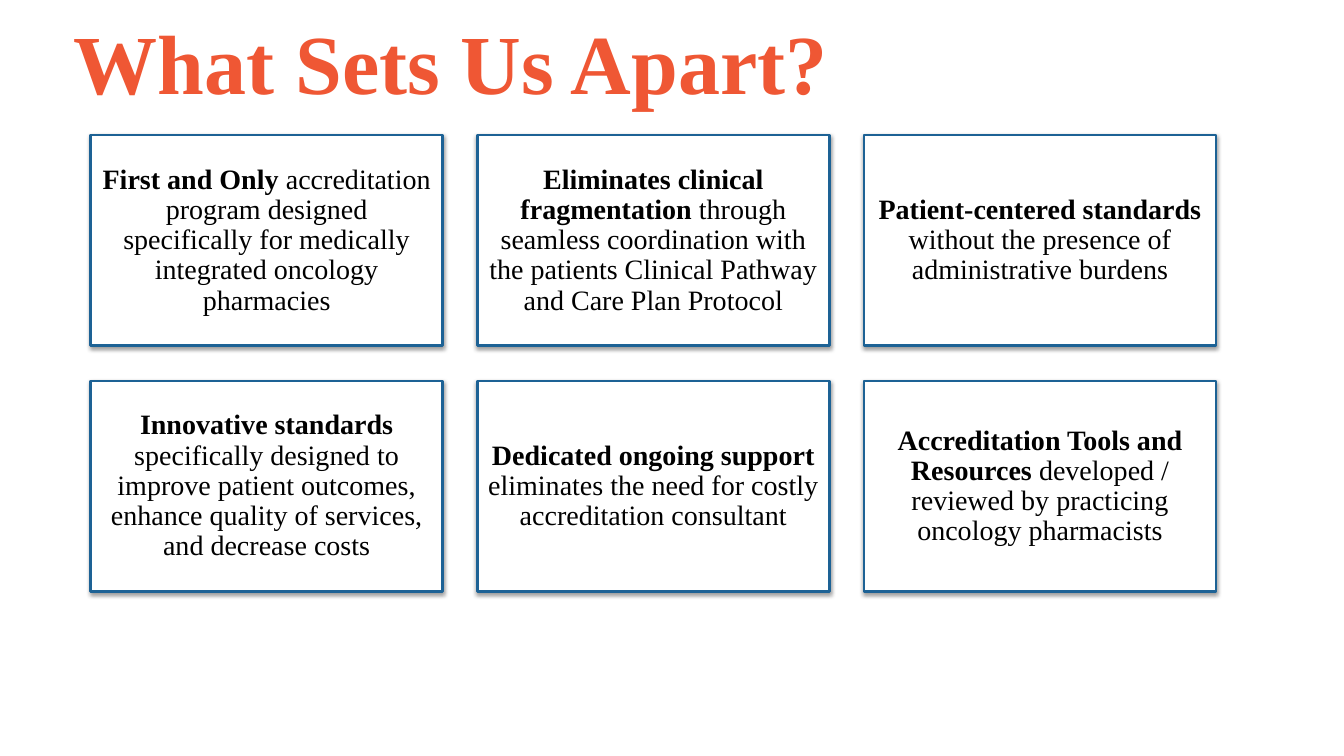
from lxml import etree
from pptx import Presentation
from pptx import util as u
from pptx.dml.color import RGBColor
from pptx.enum import shapes, text
from pptx.oxml import ns

ORANGE = RGBColor(0xEF, 0x57, 0x34)
BLUE = RGBColor(0x1D, 0x62, 0x95)
WHITE = RGBColor(0xFF, 0xFF, 0xFF)
BLACK = RGBColor(0x00, 0x00, 0x00)
FONT = "Times New Roman"

COLUMNS = 3
GRID_LEFT, GRID_TOP = 0.9, 1.34
CARD_WIDTH, CARD_HEIGHT = 3.49, 2.09
COLUMN_STEP, ROW_STEP = 3.835, 2.44

STRENGTHS = [
    ("First and Only ",
     "accreditation program designed specifically for medically integrated oncology pharmacies"),
    ("Eliminates clinical fragmentation ",
     "through seamless coordination with the patients Clinical Pathway and Care Plan Protocol"),
    ("Patient-centered standards ",
     "without the presence of administrative burdens"),
    ("Innovative standards ",
     "specifically designed to improve patient outcomes, enhance quality of services, and decrease costs"),
    ("Dedicated ongoing support",
     " eliminates the need for costly accreditation consultant"),
    ("Accreditation Tools and Resources ",
     "developed / reviewed by practicing oncology pharmacists"),
]


def set_margins(frame, side, top):
    frame.margin_left = frame.margin_right = u.Inches(side)
    frame.margin_top = frame.margin_bottom = u.Inches(top)


def style_font(font, size, color):
    font.name = FONT
    font.size = u.Pt(size)
    font.color.rgb = color


def add_shadow(shape):
    effects = etree.SubElement(shape._element.spPr, ns.qn("a:effectLst"))
    shadow = etree.SubElement(
        effects, ns.qn("a:outerShdw"), blurRad=str(u.Pt(3.1)), dist=str(u.Pt(1.6)),
        dir="5400000", rotWithShape="0")
    color = etree.SubElement(shadow, ns.qn("a:srgbClr"), val=str(BLACK))
    etree.SubElement(color, ns.qn("a:alpha"), val="38000")


def add_title(slide, title):
    box = slide.shapes.add_textbox(u.Inches(0.73), 0, u.Inches(11.5), u.Inches(1.45))
    frame = box.text_frame
    frame.word_wrap = True
    set_margins(frame, 0, 0.1)
    paragraph = frame.paragraphs[0]
    paragraph.text = title
    style_font(paragraph.font, 60, ORANGE)
    paragraph.font.bold = True


def add_card(slide, column, row, lead, detail):
    card = slide.shapes.add_shape(
        shapes.MSO_SHAPE.RECTANGLE,
        u.Inches(GRID_LEFT + column * COLUMN_STEP), u.Inches(GRID_TOP + row * ROW_STEP),
        u.Inches(CARD_WIDTH), u.Inches(CARD_HEIGHT))
    card.fill.solid()
    card.fill.fore_color.rgb = WHITE
    card.line.color.rgb = BLUE
    card.line.width = u.Pt(2)
    add_shadow(card)
    frame = card.text_frame
    frame.word_wrap = True
    frame.vertical_anchor = text.MSO_ANCHOR.MIDDLE
    set_margins(frame, 0.08, 0.08)
    paragraph = frame.paragraphs[0]
    paragraph.alignment = text.PP_ALIGN.CENTER
    paragraph.line_spacing = 0.9
    style_font(paragraph.font, 20, BLACK)
    for words, bold in ((lead, True), (detail, False)):
        run = paragraph.add_run()
        run.text = words
        run.font.bold = bold


def main():
    presentation = Presentation()
    presentation.slide_width = u.Inches(13.33)
    presentation.slide_height = u.Inches(7.5)
    slide = presentation.slides.add_slide(presentation.slide_layouts[6])
    add_title(slide, "What Sets Us Apart?")
    for index, (lead, detail) in enumerate(STRENGTHS):
        row, column = divmod(index, COLUMNS)
        add_card(slide, column, row, lead, detail)
    presentation.save("out.pptx")


if __name__ == "__main__":
    main()
